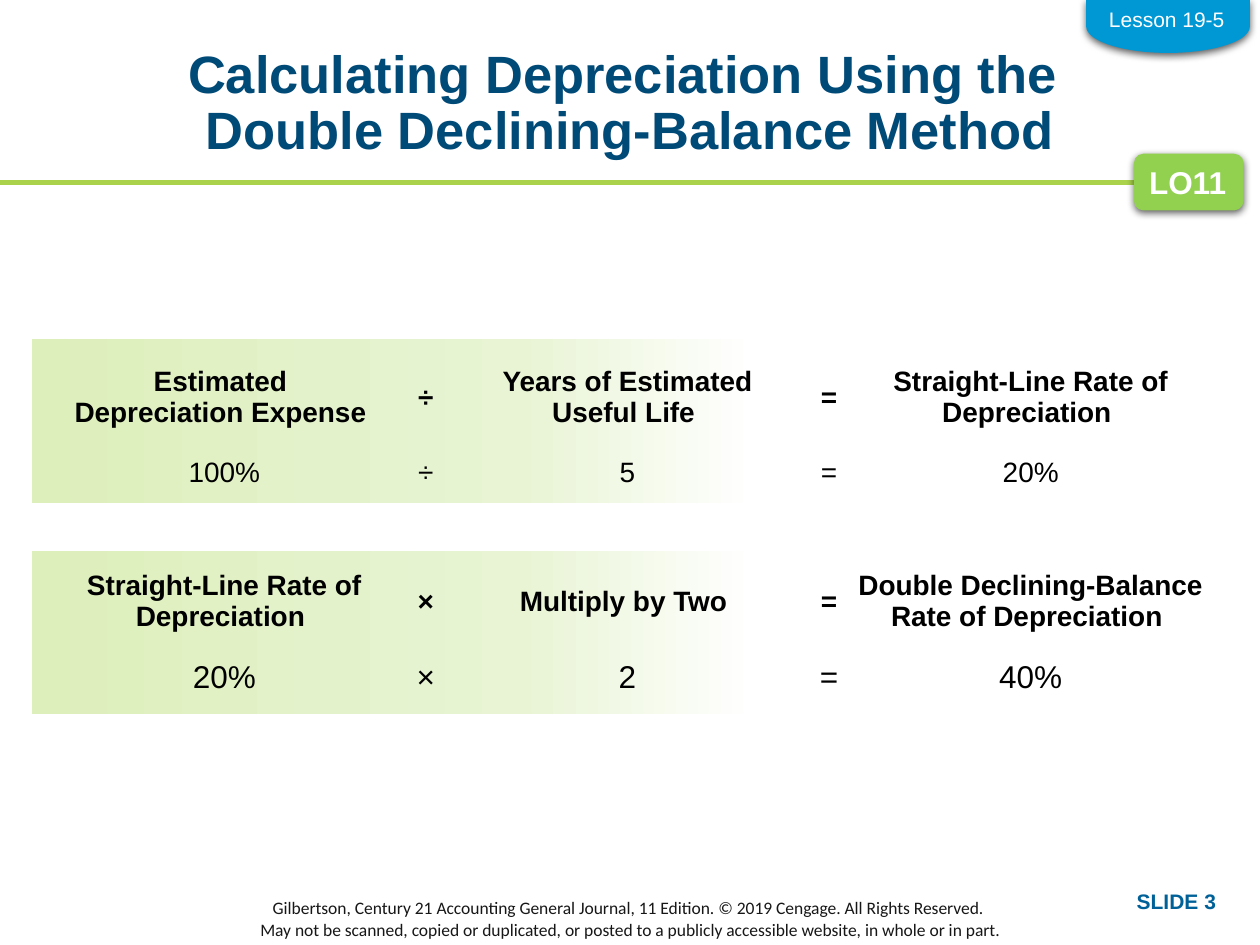
from lxml import etree
from pptx import Presentation, util as u
from pptx.dml.color import RGBColor
from pptx.enum import shapes, text
from pptx.oxml import parse_xml
from pptx.oxml.ns import nsdecls, qn

PX = 9144  # 100 px to the inch
FONT = "Arial"
NO_STYLE = "{2D5ABB26-0587-4C30-8999-92F81FD0307C}"
CENTER = text.PP_ALIGN.CENTER
MIDDLE = text.MSO_ANCHOR.MIDDLE


def color(value):
    return RGBColor.from_string(value)


def write(frame, content, size, fill, bold=False, align=CENTER, font=FONT):
    """Fill a text frame; a vertical tab breaks a line, a newline starts a paragraph."""
    frame.text = content
    frame.vertical_anchor = MIDDLE
    for paragraph in frame.paragraphs:
        paragraph.alignment = align
        paragraph.font.name = font
        paragraph.font.size = u.Pt(size)
        paragraph.font.bold = bold
        paragraph.font.color.rgb = color(fill)


presentation = Presentation()
presentation.slide_width = 1000 * PX
presentation.slide_height = 750 * PX
slide = presentation.slides.add_slide(presentation.slide_layouts[5])

# Title
title = slide.shapes.title
title.left, title.top, title.width, title.height = (n * PX for n in (69, 42, 862, 82))
frame = title.text_frame
write(frame, "Calculating Depreciation Using the \vDouble Declining-Balance Method",
      30, "004A78", bold=True)
frame.margin_left = frame.margin_right = frame.margin_top = frame.margin_bottom = 0
frame.auto_size = text.MSO_AUTO_SIZE.NONE
frame.paragraphs[0].line_spacing = 0.9

# Rule under the title
rule = slide.shapes.add_connector(shapes.MSO_CONNECTOR.STRAIGHT, 0, 145 * PX, 950 * PX, 145 * PX)
rule.line.color.rgb = color("AAD24B")
rule.line.width = u.Pt(3)
etree.SubElement(rule._element.spPr, qn("a:effectLst"))

# Formula panels: a fading band, a row of terms and a row of values
panels = [
    (269, 280, 16,
     ["Estimated \vDepreciation Expense ", "÷", "Years of Estimated\vUseful Life ",
      "=", "Straight-Line Rate of\vDepreciation "],
     ["100%", "÷", "5", "=", "20%"]),
    (437, 442, 18,
     ["Straight-Line Rate of\vDepreciation ", "×", "Multiply by Two ",
      "=", "Double Declining-Balance\vRate of Depreciation "],
     ["20%", "×", "2", "=", "40%"]),
]
for band_top, table_top, value_size, terms, values in panels:
    band = slide.shapes.add_shape(shapes.MSO_SHAPE.RECTANGLE,
                                  25 * PX, band_top * PX, 775 * PX, 130 * PX)
    band.shadow.inherit = False
    band.line.fill.background()
    band.fill.gradient()
    band.fill.gradient_angle = 0
    stops = band._element.spPr.find(qn("a:gradFill")).find(qn("a:gsLst"))
    for stop in list(stops):
        stops.remove(stop)
    for position, value in ((0, "DDEFBB"), (50, "E8F4D4"), (74, "FFFFFF")):
        stop = etree.SubElement(stops, qn("a:gs"), pos=str(position * 1000))
        etree.SubElement(stop, qn("a:srgbClr"), val=value)

    for top, height, size, bold, row in ((table_top, 70, 16, True, terms),
                                         (table_top + 70, 50, value_size, False, values)):
        table = slide.shapes.add_table(1, 5, 28 * PX, top * PX, 940 * PX, height * PX).table
        table.first_row = table.horz_banding = False
        table._tbl.tblPr.find(qn("a:tableStyleId")).text = NO_STYLE
        for column, width in zip(table.columns, (300, 20, 300, 20, 300)):
            column.width = width * PX
        for cell, content in zip(table.rows[0].cells, row):
            cell.fill.background()
            cell.margin_left = cell.margin_right = cell.margin_top = PX
            cell.margin_bottom = 0
            write(cell.text_frame, content, size, "000000", bold)
            cell.vertical_anchor = MIDDLE

# Shadowed tabs: learning objective and lesson
objective = slide.shapes.add_shape(shapes.MSO_SHAPE.ROUNDED_RECTANGLE,
                                   900 * PX, 122 * PX, 87 * PX, 45 * PX)
lesson = slide.shapes.add_shape(shapes.MSO_SHAPE.FLOWCHART_DELAY,
                                906 * PX, -44 * PX, 42 * PX, 130 * PX)
lesson.rotation = 90
for tab, fill in ((objective, "92D050"), (lesson, "0098D4")):
    tab.fill.solid()
    tab.fill.fore_color.rgb = color(fill)
    tab.line.fill.background()
    tab._element.spPr.append(parse_xml(
        f'<a:effectLst {nsdecls("a")}>'
        f'<a:outerShdw blurRad="{u.Pt(4.5)}" dist="{u.Pt(1.5)}" dir="5400000" rotWithShape="0">'
        '<a:srgbClr val="000000"><a:alpha val="63000"/></a:srgbClr>'
        '</a:outerShdw></a:effectLst>'))
write(objective.text_frame, "LO11", 18, "FFFFFF", bold=True, align=text.PP_ALIGN.LEFT)
objective.text_frame.word_wrap = False

# Lesson label, slide number and copyright line
labels = [
    (870, 0, 112, "Lesson 19-5", 12, "FFFFFF", False, CENTER, FONT),
    (775, 700, 200, "SLIDE 3", 12, "006198", True, text.PP_ALIGN.RIGHT, FONT),
    (0, 714, 1000,
     "Gilbertson, Century 21 Accounting General Journal, 11 Edition. "
     "© 2019 Cengage. All Rights Reserved. \n"
     "May not be scanned, copied or duplicated, or posted to a publicly accessible website, "
     "in whole or in part.", 10, "181717", False, CENTER, "Calibri"),
]
for left, top, width, *style in labels:
    label = slide.shapes.add_textbox(left * PX, top * PX, width * PX, 30 * PX)
    label.text_frame.word_wrap = True
    write(label.text_frame, *style)

presentation.save("out.pptx")
